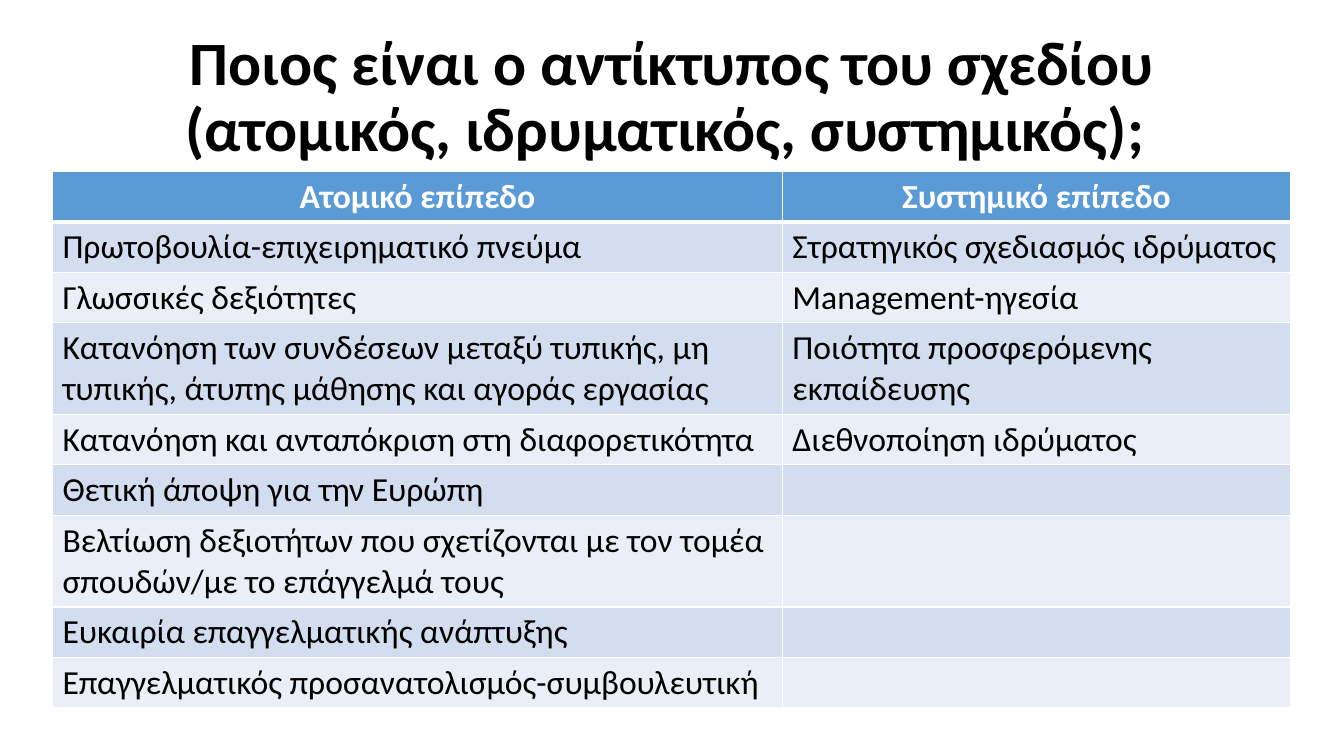
import pptx
import pptx.dml.color
import pptx.enum.text
import pptx.oxml.ns
import pptx.util
from lxml import etree

Inches = pptx.util.Inches
Pt = pptx.util.Pt
RGBColor = pptx.dml.color.RGBColor
PP_ALIGN = pptx.enum.text.PP_ALIGN

TITLE = "Ποιος είναι ο αντίκτυπος του σχεδίου (ατομικός, ιδρυματικός, συστημικός); "
HEADER = ("Ατομικό επίπεδο", "Συστημικό επίπεδο")
# Individual level, systemic level, lines of text in the row
IMPACTS = [
    ("Πρωτοβουλία-επιχειρηματικό πνεύμα", "Στρατηγικός σχεδιασμός ιδρύματος", 1),
    ("Γλωσσικές δεξιότητες", "Management-ηγεσία", 1),
    ("Κατανόηση των συνδέσεων μεταξύ τυπικής, μη τυπικής, άτυπης μάθησης και αγοράς εργασίας",
     "Ποιότητα προσφερόμενης εκπαίδευσης", 2),
    ("Κατανόηση και ανταπόκριση στη διαφορετικότητα", "Διεθνοποίηση ιδρύματος", 1),
    ("Θετική άποψη για την Ευρώπη", "", 1),
    ("Βελτίωση δεξιοτήτων που σχετίζονται με τον τομέα σπουδών/με το επάγγελμά τους", "", 2),
    ("Ευκαιρία επαγγελματικής ανάπτυξης", "", 1),
    ("Επαγγελματικός προσανατολισμός-συμβουλευτική", "", 1),
]

FONT = "Calibri"
BLACK = RGBColor(0x00, 0x00, 0x00)
WHITE = RGBColor(0xFF, 0xFF, 0xFF)
HEADER_BLUE = RGBColor(0x5B, 0x9B, 0xD5)
BAND_FILLS = (RGBColor(0xD2, 0xDE, 0xEF), RGBColor(0xEA, 0xEF, 0xF7))

SLIDE_SIZE = (13.33, 7.5)
TITLE_BOX = (0.92, 0.25, 11.5, 1.45)
TABLE_LEFT, TABLE_TOP = 0.52, 1.7
COLUMN_WIDTHS = (7.24, 5.04)
ROW_HEIGHTS = {1: 0.5, 2: 0.91}


def add_run(paragraph, text, size, color, bold):
    run = paragraph.add_run()
    run.text = text
    run.font.name = FONT
    run.font.size = Pt(size)
    run.font.bold = bold
    run.font.color.rgb = color


def add_title(slide):
    title = slide.shapes.add_textbox(*map(Inches, TITLE_BOX))
    frame = title.text_frame
    frame.word_wrap = True
    frame.vertical_anchor = pptx.enum.text.MSO_ANCHOR.MIDDLE
    paragraph = frame.paragraphs[0]
    paragraph.alignment = PP_ALIGN.CENTER
    paragraph.line_spacing = 0.9
    add_run(paragraph, TITLE, 44, BLACK, True)


def add_borders(cell, bottom_width):
    """Give the cell white edges; call before filling, as borders come first."""
    properties = cell._tc.get_or_add_tcPr()
    for edge, width in (("L", 1), ("R", 1), ("T", 1), ("B", bottom_width)):
        line = etree.SubElement(properties, pptx.oxml.ns.qn(f"a:ln{edge}"), w=str(Pt(width)))
        fill = etree.SubElement(line, pptx.oxml.ns.qn("a:solidFill"))
        etree.SubElement(fill, pptx.oxml.ns.qn("a:srgbClr"), val=str(WHITE))


def add_impact_table(slide):
    rows = [(*HEADER, 1), *IMPACTS]
    heights = [ROW_HEIGHTS[lines] for *_, lines in rows]
    table = slide.shapes.add_table(
        len(rows), len(COLUMN_WIDTHS), Inches(TABLE_LEFT), Inches(TABLE_TOP),
        Inches(sum(COLUMN_WIDTHS)), Inches(sum(heights))).table
    for column, width in zip(table.columns, COLUMN_WIDTHS):
        column.width = Inches(width)
    for row_index, (*texts, _) in enumerate(rows):
        table.rows[row_index].height = Inches(heights[row_index])
        is_header = row_index == 0
        for column_index, text in enumerate(texts):
            cell = table.cell(row_index, column_index)
            add_borders(cell, 3 if is_header else 1)
            cell.fill.solid()
            cell.fill.fore_color.rgb = HEADER_BLUE if is_header else BAND_FILLS[(row_index - 1) % 2]
            paragraph = cell.text_frame.paragraphs[0]
            paragraph.alignment = PP_ALIGN.CENTER if is_header else PP_ALIGN.LEFT
            if text:
                add_run(paragraph, text, 24, WHITE if is_header else BLACK, is_header)


def main():
    presentation = pptx.Presentation()
    presentation.slide_width, presentation.slide_height = map(Inches, SLIDE_SIZE)
    slide = presentation.slides.add_slide(presentation.slide_layouts[6])
    add_title(slide)
    add_impact_table(slide)
    presentation.save("out.pptx")


if __name__ == "__main__":
    main()
